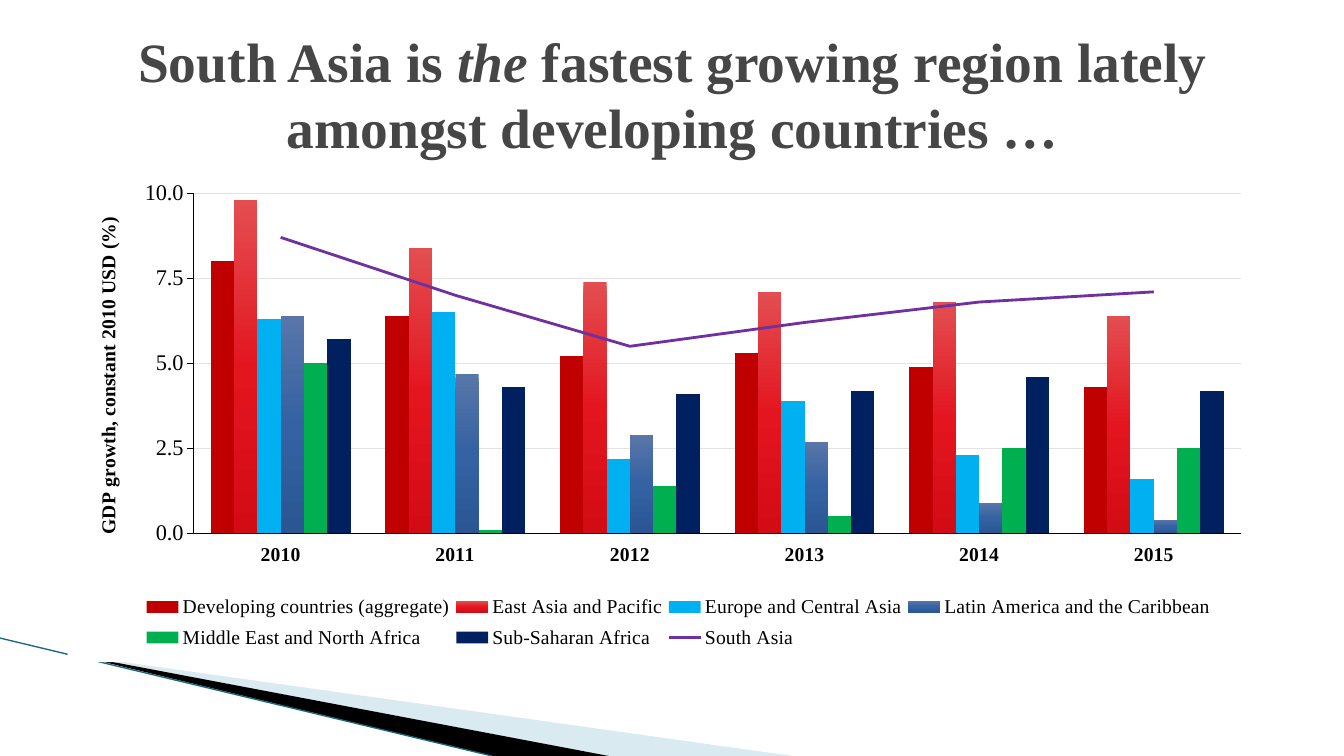
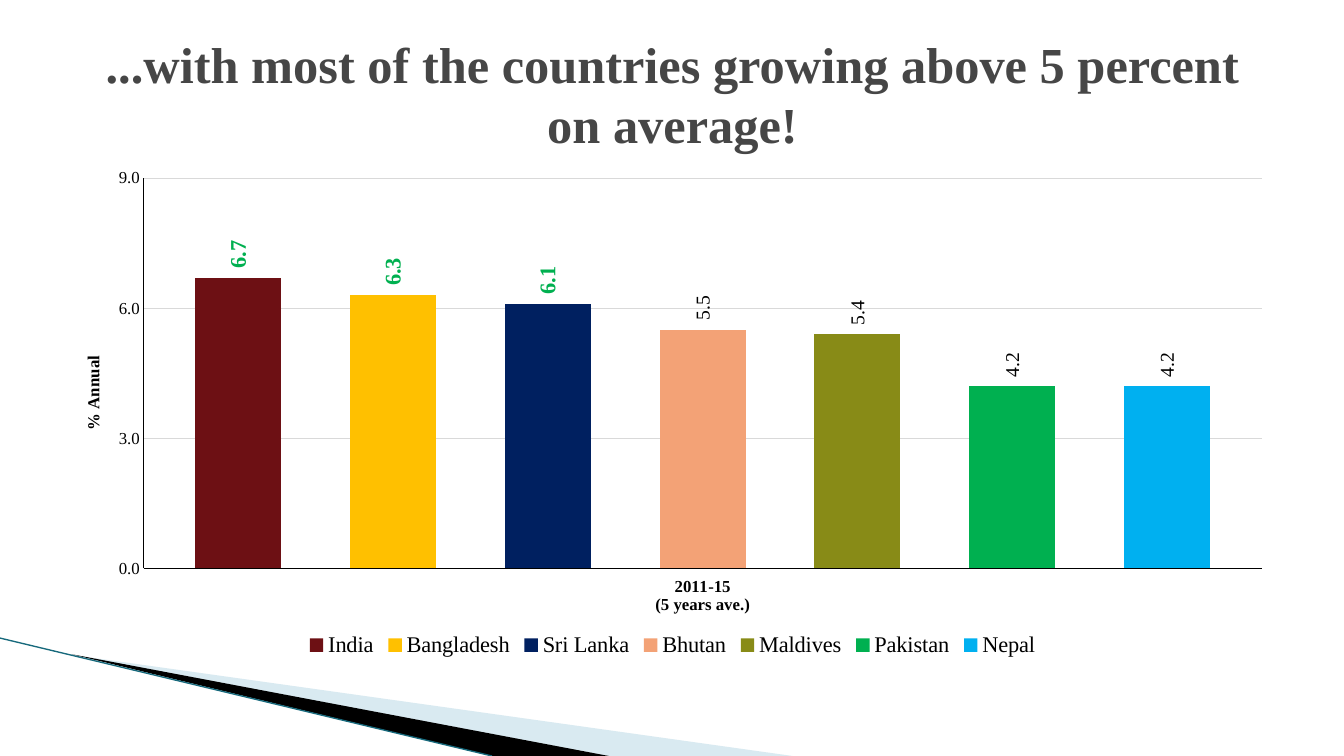
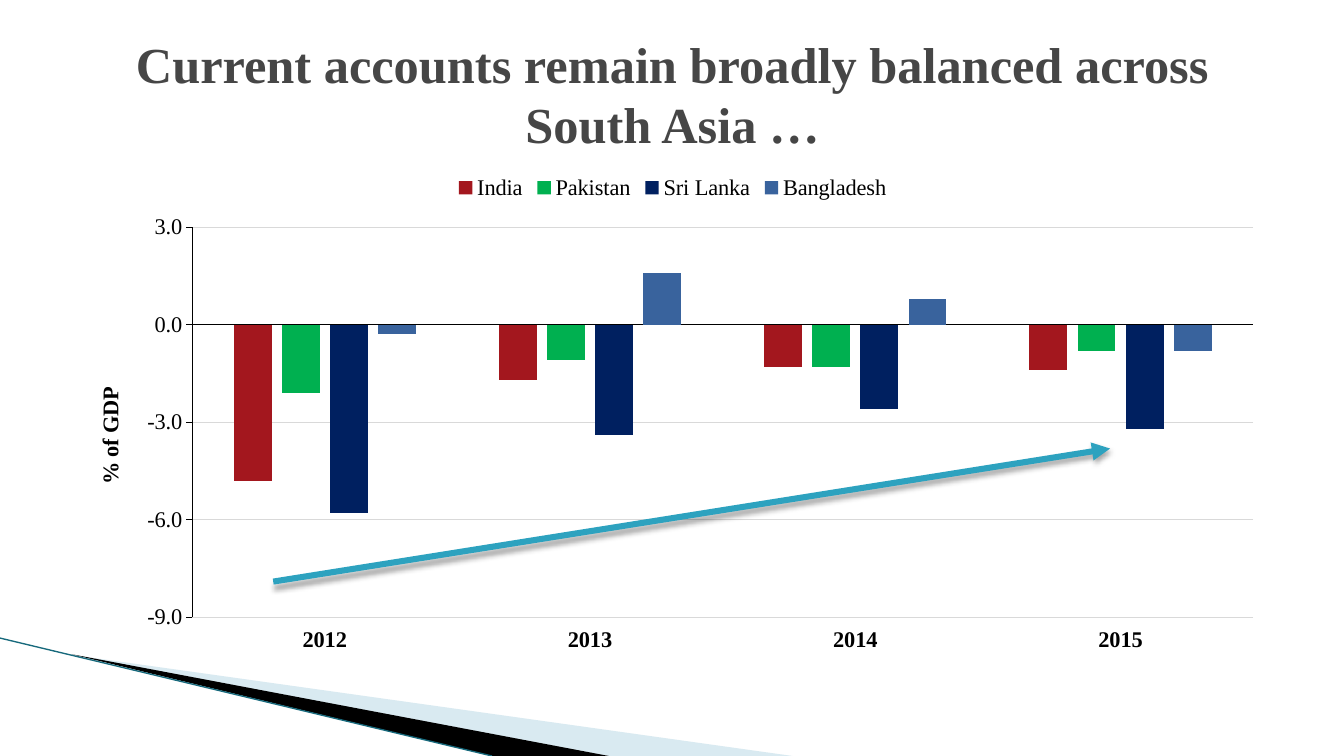
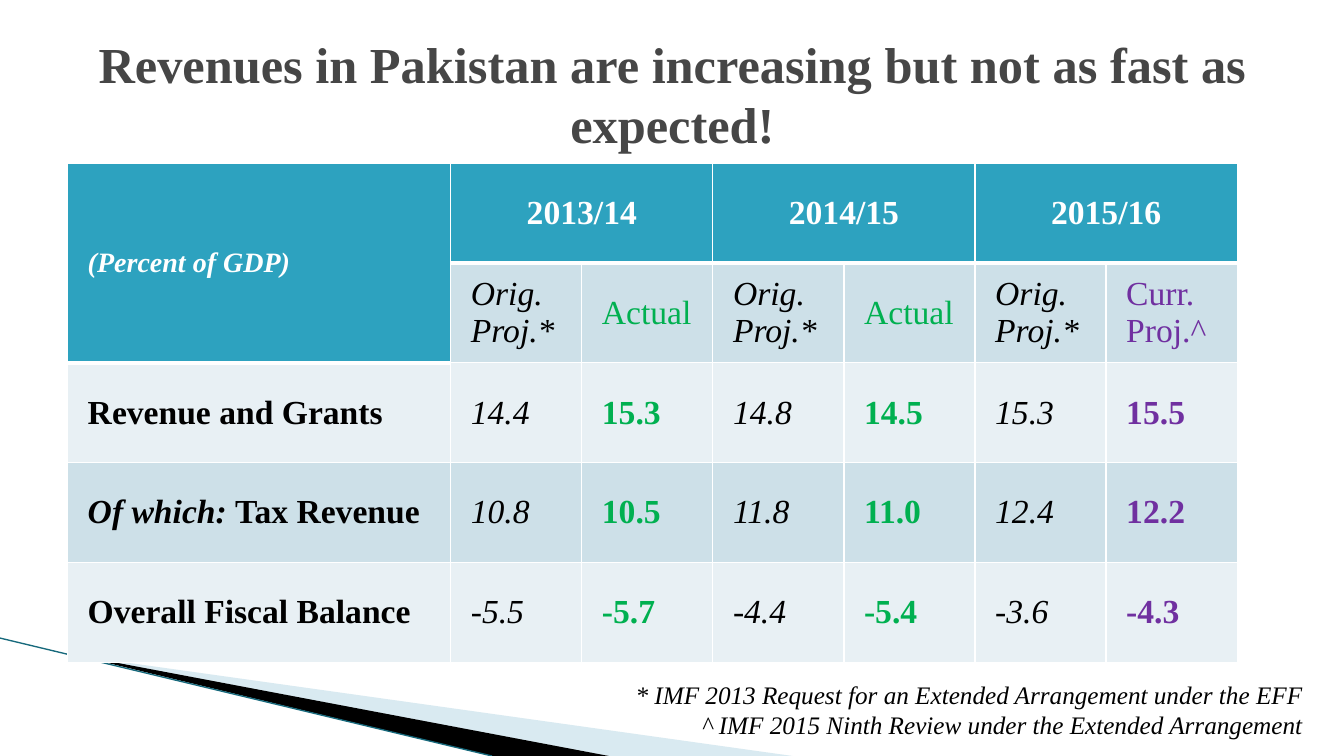
from copy import deepcopy
from dataclasses import dataclass

from pptx import Presentation
from pptx import util as u
from pptx.chart.data import CategoryChartData
from pptx.dml.color import RGBColor
from pptx.enum import chart as charts
from pptx.enum import shapes, text
from pptx.oxml import parse_xml
from pptx.oxml.ns import nsdecls, qn

PX = 9144  # EMU in one px, 100 px to the inch


@dataclass(frozen=True)
class Theme:
    font: str = "Times New Roman"
    title: str = "464646"
    ink: str = "000000"
    white: str = "FFFFFF"
    band: str = "A0CBDC"
    edge: str = "17697C"
    accent: str = "2DA2BF"
    row_dark: str = "CDE0E8"
    row_light: str = "E8F0F4"
    grid: str = "D9D9D9"
    grid_light: str = "E3E3E3"
    green: str = "00B050"
    navy: str = "002060"
    sky: str = "00B0F0"
    purple: str = "7030A0"
    title_size: float = 36
    title_large: float = 39.6
    table_size: float = 24
    corner_size: float = 20
    note_size: float = 18
    large: float = 16
    medium: float = 14
    small: float = 12


THEME = Theme()
CONTENT = (67, 162, 1200, 495)
REDS = ("E34E51", "E31620", "D20B15")
BLUES = ("5976A9", "3462A2", "2A5794")


# Text and lines
def px(*lengths):
    return [u.Emu(length * PX) for length in lengths]


def rgb(color):
    return RGBColor.from_string(color)


def format_font(font, size, color=THEME.ink, **values):
    values = {"name": THEME.font, "size": u.Pt(size), **values}
    for name, value in values.items():
        setattr(font, name, value)
    font.color.rgb = rgb(color)


def format_line(line, color, width=0.75):
    line.color.rgb = rgb(color)
    line.width = u.Pt(width)


def write(para, spans, size, align=text.PP_ALIGN.LEFT, **shared):
    """Fill a paragraph with (words, format) spans."""
    para.alignment = align
    for words, values in spans:
        span = para.add_run()
        span.text = words
        format_font(span.font, **{"size": size, **shared, **values})


def add_text(page, place, paragraphs, size, align, anchor, **shared):
    frame = page.shapes.add_textbox(*px(*place)).text_frame
    frame.word_wrap = True
    frame.vertical_anchor = anchor
    for index, spans in enumerate(paragraphs):
        para = frame.add_paragraph() if index else frame.paragraphs[0]
        write(para, spans, size, align, **shared)


def add_title(page, spans, size=THEME.title_size):
    add_text(page, (67, 30, 1200, 125), [spans], size, text.PP_ALIGN.CENTER,
             text.MSO_ANCHOR.MIDDLE, color=THEME.title, bold=True)


# Shared corner bands
def add_band(page, points, color, opacity=100):
    builder = page.shapes.build_freeform(*points[0], scale=float(PX))
    builder.add_line_segments(points[1:], close=True)
    band = builder.convert_to_shape()
    band.shadow.inherit = False
    band.fill.solid()
    band.fill.fore_color.rgb = rgb(color)
    band.line.fill.background()
    if opacity < 100:
        tint = band._element.spPr.find(".//" + qn("a:srgbClr"))
        tint.append(parse_xml(f'<a:alpha {nsdecls("a")} val="{opacity * 1000}"/>'))


def add_connector(page, start, end, color, width, effect=""):
    line = page.shapes.add_connector(shapes.MSO_CONNECTOR.STRAIGHT, *px(*start, *end))
    format_line(line.line, color, width)
    line._element.spPr.append(
        parse_xml(f'<a:effectLst {nsdecls("a")}>{effect}</a:effectLst>'))
    return line


def add_page(deck):
    page = deck.slides.add_slide(deck.slide_layouts[6])
    add_band(page, [(73, 650), (786, 750), (603, 750)], THEME.band, 40)
    add_band(page, [(71, 649), (604, 750), (488, 750)], THEME.ink)
    add_connector(page, (0, 633), (488, 750), THEME.edge, 0.95)
    return page


def add_arrow(page, start, end):
    shadow = ('<a:outerShdw blurRad="50800" dist="38100" dir="5400000">'
              '<a:srgbClr val="000000"><a:alpha val="35000"/></a:srgbClr></a:outerShdw>')
    arrow = add_connector(page, start, end, THEME.accent, 4.33, shadow)
    arrow.line._get_or_add_ln().append(
        parse_xml(f'<a:tailEnd {nsdecls("a")} type="triangle"/>'))


# Charts
def make_layout(x, y, w=None, h=None, inner=False):
    target = '<c:layoutTarget val="inner"/>' if inner else ""
    modes = "".join(f'<c:{axis}Mode val="edge"/>' for axis in "xy")
    sizes = zip("xywh", (x, y, w, h))
    values = "".join(f'<c:{key} val="{value}"/>' for key, value in sizes if value is not None)
    return parse_xml(f'<c:layout {nsdecls("c")}><c:manualLayout>{target}{modes}{values}'
                     '</c:manualLayout></c:layout>')


def place_part(part, layout, after=None):
    """Give a chart part its layout, as first child or behind a named one."""
    for old in part.findall(qn("c:layout")):
        part.remove(old)
    if after:
        part.find(qn(after)).addnext(layout)
    else:
        part.insert(0, layout)


def turn_upright(element):
    body = element.find(".//" + qn("a:bodyPr"))
    body.set("rot", "-5400000")
    body.set("vert", "horz")


def fill_series(series, color):
    fill = series.format.fill
    series.format.line.fill.background()
    series.invert_if_negative = False
    if isinstance(color, str):
        fill.solid()
        fill.fore_color.rgb = rgb(color)
        return
    fill.gradient()
    fill.gradient_angle = 270
    stops = series._element.find(".//" + qn("a:gsLst"))
    stops.append(deepcopy(stops[0]))
    for stop, position, shade in zip(fill.gradient_stops, (0, 0.5, 1), color):
        stop.position = position
        stop.color.rgb = rgb(shade)


def move_last_to_line(chart, color):
    """Turn the last column series into a line on the same axes."""
    bars = chart.plots[0]._element
    series = bars.findall(qn("c:ser"))[-1]
    for flag in series.findall(qn("c:invertIfNegative")):
        series.remove(flag)
    lines = parse_xml(f'<c:lineChart {nsdecls("c")}><c:grouping val="standard"/>'
                      '<c:varyColors val="0"/><c:marker val="1"/></c:lineChart>')
    lines.insert(2, series)
    for axis in bars.findall(qn("c:axId")):
        lines.append(deepcopy(axis))
    bars.addnext(lines)
    trend = chart.plots[1].series[0]
    trend.smooth = False
    trend.marker.style = charts.XL_MARKER_STYLE.NONE
    format_line(trend.format.line, color, 2)


def format_axes(chart, scale, ticks, size, category_size, title, grid):
    low, high, step, number_format = scale
    values, categories = chart.value_axis, chart.category_axis
    values.minimum_scale, values.maximum_scale, values.major_unit = low, high, step
    values.has_major_gridlines = True
    format_line(values.major_gridlines.format.line, grid)
    values.major_tick_mark = ticks
    categories.major_tick_mark = charts.XL_TICK_MARK.NONE
    categories.tick_label_position = charts.XL_TICK_LABEL_POSITION.LOW
    values.tick_labels.number_format = number_format
    values.tick_labels.number_format_is_linked = False
    for axis in (values, categories):
        axis.minor_tick_mark = charts.XL_TICK_MARK.NONE
        format_line(axis.format.line, THEME.ink)
    format_font(values.tick_labels.font, size, bold=False)
    format_font(categories.tick_labels.font, category_size, bold=True)
    words, title_size, x, y = title
    frame = values.axis_title.text_frame
    write(frame.paragraphs[0], [(words, {})], title_size, None, bold=True)
    turn_upright(frame._txBody)
    place_part(values.axis_title._element, make_layout(x, y), "c:tx")


def add_columns(page, categories, series, colors, gap, overlap, plot, axes, legend,
                background="<a:noFill/>", line_color=None, legend_layout=None):
    data = CategoryChartData(number_format="0.0")
    data.categories = categories
    for name, values in series:
        data.add_series(name, values)
    chart = page.shapes.add_chart(charts.XL_CHART_TYPE.COLUMN_CLUSTERED,
                                  *px(*CONTENT), data).chart
    chart.has_title = False
    chart._chartSpace.find(qn("c:chart")).addnext(parse_xml(
        f'<c:spPr {nsdecls("c", "a")}>{background}<a:ln><a:noFill/></a:ln></c:spPr>'))
    format_font(chart.font, axes["size"])
    bars = chart.plots[0]
    bars.vary_by_categories = False
    bars.gap_width, bars.overlap = gap, overlap
    if line_color:
        move_last_to_line(chart, line_color)
    for item, color in zip(bars.series, colors):
        fill_series(item, color)
    place_part(chart._chartSpace.find(".//" + qn("c:plotArea")),
               make_layout(*plot, inner=True))
    format_axes(chart, **axes)
    position, size = legend
    chart.has_legend = True
    chart.legend.position = position
    chart.legend.include_in_layout = False
    format_font(chart.legend.font, size)
    if legend_layout:
        place_part(chart.legend._element, make_layout(*legend_layout), "c:legendPos")
    return chart


def label_series(series, size, **values):
    labels = series.data_labels
    labels.show_value = True
    labels.position = charts.XL_LABEL_POSITION.OUTSIDE_END
    labels.number_format = "_(#,##0.0_)"
    labels.number_format_is_linked = False
    format_font(labels.font, size, **values)
    turn_upright(labels._element)


# Table
def set_borders(cell, top, bottom):
    for side, width in {"L": 1, "R": 1, "T": top, "B": bottom}.items():
        cell._tc.get_or_add_tcPr().append(parse_xml(
            f'<a:ln{side} {nsdecls("a")} w="{width * 12700}"><a:solidFill>'
            f'<a:srgbClr val="{THEME.white}"/></a:solidFill></a:ln{side}>'))


def add_table(page, rows, widths, row_height, fills, merges):
    """Rows hold lists of spans; None marks a cell covered by a merge."""
    table = page.shapes.add_table(len(rows), len(widths), *px(
        *CONTENT[:2], sum(widths), row_height * len(rows))).table
    table.first_row = table.horz_banding = False
    for column, width in zip(table.columns, widths):
        column.width = px(width)[0]
    margins = dict(zip(("left", "top", "right", "bottom"), px(20, 5, 20, 5)))
    for r, row in enumerate(rows):
        table.rows[r].height = px(row_height)[0]
        for c, spans in enumerate(row):
            cell = table.cell(r, c)
            last_header = 0 if c else 1
            header = r <= last_header
            set_borders(cell, 3 if r == last_header + 1 else 1, 3 if header else 1)
            cell.fill.solid()
            cell.fill.fore_color.rgb = rgb(THEME.accent if header else fills[r])
            cell.vertical_anchor = text.MSO_ANCHOR.MIDDLE
            for side, margin in margins.items():
                setattr(cell, f"margin_{side}", margin)
            if spans:
                align = text.PP_ALIGN.CENTER if r == 0 and c else text.PP_ALIGN.LEFT
                write(cell.text_frame.paragraphs[0], spans, THEME.table_size, align)
    for first, last in merges:
        table.cell(*first).merge(table.cell(*last))


# Pages
def build_growth(deck):
    page = add_page(deck)
    add_columns(
        page, ["2010", "2011", "2012", "2013", "2014", "2015"],
        [("Developing countries (aggregate)", (8, 6.4, 5.2, 5.3, 4.9, 4.3)),
         ("East Asia and Pacific", (9.8, 8.4, 7.4, 7.1, 6.8, 6.4)),
         ("Europe and Central Asia", (6.3, 6.5, 2.2, 3.9, 2.3, 1.6)),
         ("Latin America and the Caribbean", (6.4, 4.7, 2.9, 2.7, 0.9, 0.4)),
         ("Middle East and North Africa", (5, 0.1, 1.4, 0.5, 2.5, 2.5)),
         ("Sub-Saharan Africa", (5.7, 4.3, 4.1, 4.2, 4.6, 4.2)),
         ("South Asia", (8.7, 7, 5.5, 6.2, 6.8, 7.1))],
        ["C00000", REDS, THEME.sky, BLUES, THEME.green, THEME.navy],
        gap=150, overlap=0, plot=(0.104, 0.06, 0.866, 0.682),
        axes=dict(scale=(0, 10, 2.5, "0.0"), ticks=charts.XL_TICK_MARK.OUTSIDE,
                  size=THEME.large, category_size=THEME.medium, grid=THEME.grid_light,
                  title=("GDP growth, constant 2010 USD (%)", THEME.medium, 0.02, 0.1)),
        legend=(charts.XL_LEGEND_POSITION.BOTTOM, THEME.medium),
        background=f'<a:solidFill><a:srgbClr val="{THEME.white}"/></a:solidFill>',
        line_color=THEME.purple, legend_layout=(0.06, 0.85, 0.89, 0.14))
    add_title(page, [("South Asia is ", {}), ("the ", {"italic": True}),
                     ("fastest growing region lately amongst developing countries …", {})],
              THEME.title_large)


def build_averages(deck):
    page = add_page(deck)
    averages = {"India": 6.7, "Bangladesh": 6.3, "Sri Lanka": 6.1, "Bhutan": 5.5,
                "Maldives": 5.4, "Pakistan": 4.2, "Nepal": 4.2}
    chart = add_columns(
        page, ["2011-15\n(5 years ave.)"],
        [(country, (value,)) for country, value in averages.items()],
        ["6D1014", "FFC000", THEME.navy, "F3A276", "888B17", THEME.green, THEME.sky],
        gap=120, overlap=-80, plot=(0.063, 0.03, 0.924, 0.782),
        axes=dict(scale=(0, 9, 3, "#,##0.0"), ticks=charts.XL_TICK_MARK.NONE,
                  size=THEME.small, category_size=THEME.small, grid=THEME.grid,
                  title=("% Annual", THEME.small, 0.01, 0.38)),
        legend=(charts.XL_LEGEND_POSITION.BOTTOM, THEME.large))
    for series in chart.plots[0].series:
        if averages[series.name] > 6:
            label_series(series, THEME.large, color=THEME.green, bold=True)
        else:
            label_series(series, THEME.medium, bold=False)
    add_title(page, [("...with most of the countries growing above 5 percent on average!", {})])


def build_accounts(deck):
    page = add_page(deck)
    add_columns(
        page, ["2012", "2013", "2014", "2015"],
        [("India", (-4.8, -1.7, -1.3, -1.4)),
         ("Pakistan", (-2.1, -1.1, -1.3, -0.8)),
         ("Sri Lanka", (-5.8, -3.4, -2.6, -3.2)),
         ("Bangladesh", (-0.3, 1.6, 0.8, -0.8))],
        ["A3171E", THEME.green, THEME.navy, "39639D"],
        gap=219, overlap=-27, plot=(0.103, 0.128, 0.877, 0.782),
        axes=dict(scale=(-9, 3, 3, "#,##0.0"), ticks=charts.XL_TICK_MARK.OUTSIDE,
                  size=THEME.large, category_size=THEME.large, grid=THEME.grid,
                  title=("% of GDP", THEME.large, 0.02, 0.44)),
        legend=(charts.XL_LEGEND_POSITION.TOP, THEME.large))
    add_title(page, [("Current accounts remain broadly balanced across South Asia …", {})])
    add_arrow(page, (271, 577), (1101, 445))


def build_revenues(deck):
    page = add_page(deck)
    head = {"color": THEME.white, "bold": True}
    bold, italic = {"bold": True}, {"italic": True}
    hues = [THEME.green, THEME.green, THEME.purple]

    rows = [[[("(Percent of GDP)", {**head, **italic, "size": THEME.corner_size})]],
            [None]]
    for year in ("2013/14", "2014/15", "2015/16"):
        rows[0] += [[(year, head)], None]
    for outcome, hue in zip(("Actual", "Actual", "Curr. Proj.^"), hues):
        rows[1] += [[("Orig. Proj.*", italic)], [(outcome, {"color": hue})]]
    figures = [
        ([("Revenue and Grants", bold)], "14.4 15.3 14.8 14.5 15.3 15.5"),
        ([("Of which: ", {**bold, **italic}), ("Tax Revenue", bold)],
         "10.8 10.5 11.8 11.0 12.4 12.2"),
        ([("Overall Fiscal Balance", bold)], "-5.5 -5.7 -4.4 -5.4 -3.6 -4.3")]
    for label, numbers in figures:
        numbers = numbers.split()
        row = [label]
        for projected, outcome, hue in zip(numbers[::2], numbers[1::2], hues):
            row += [[(projected, italic)], [(outcome, {**bold, "color": hue})]]
        rows.append(row)

    stripes = [THEME.row_light, THEME.row_dark]
    add_table(page, rows, [380] + [130] * 6, 99, [stripes[r % 2] for r in range(5)],
              [((0, 0), (1, 0))] + [((0, c), (0, c + 1)) for c in (1, 3, 5)])
    add_title(page, [("Revenues in Pakistan are increasing but not as fast as expected!", {})])
    add_text(page, (610, 669, 692, 71),
             [[("* IMF 2013 Request for an Extended Arrangement under the EFF", {})],
              [("^ IMF 2015 Ninth Review under the Extended Arrangement", {})]],
             THEME.note_size, text.PP_ALIGN.RIGHT, text.MSO_ANCHOR.TOP, italic=True)


def main():
    deck = Presentation()
    deck.slide_width, deck.slide_height = px(1333, 750)
    for build in (build_growth, build_averages, build_accounts, build_revenues):
        build(deck)
    deck.save("out.pptx")


if __name__ == "__main__":
    main()
